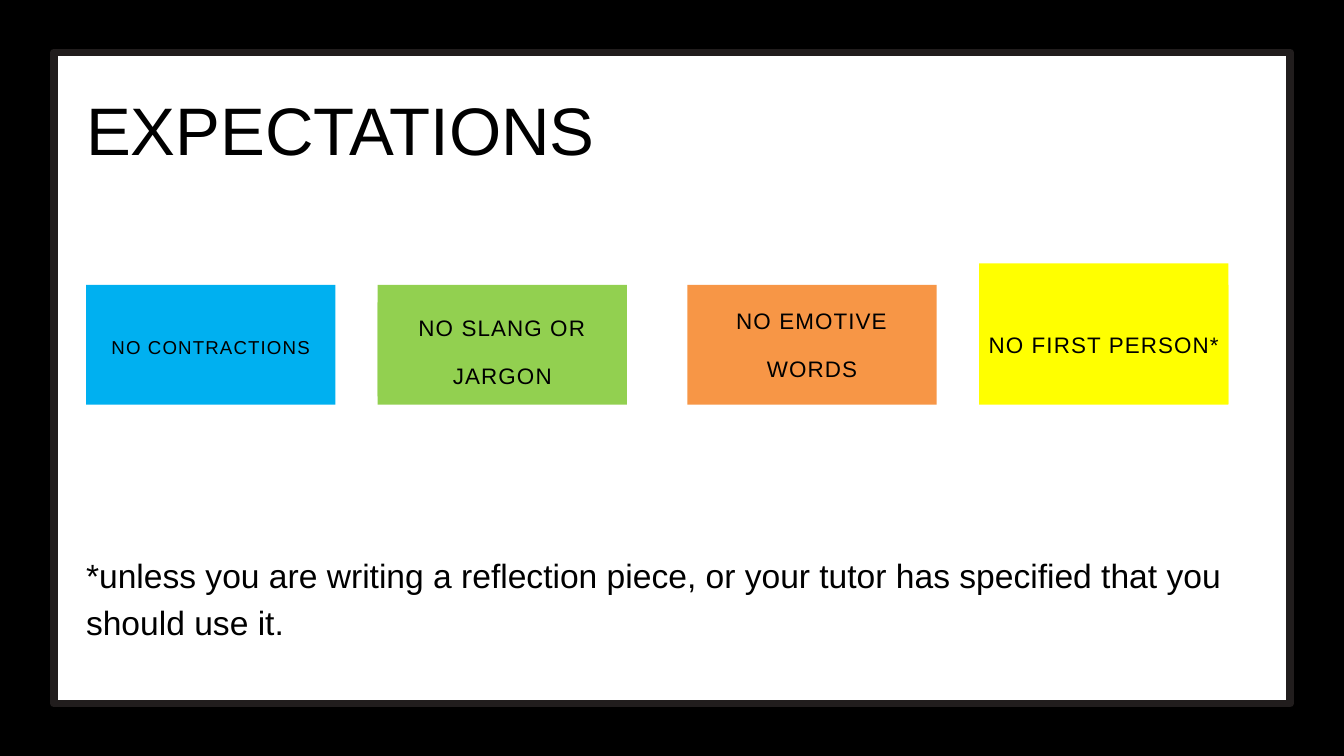
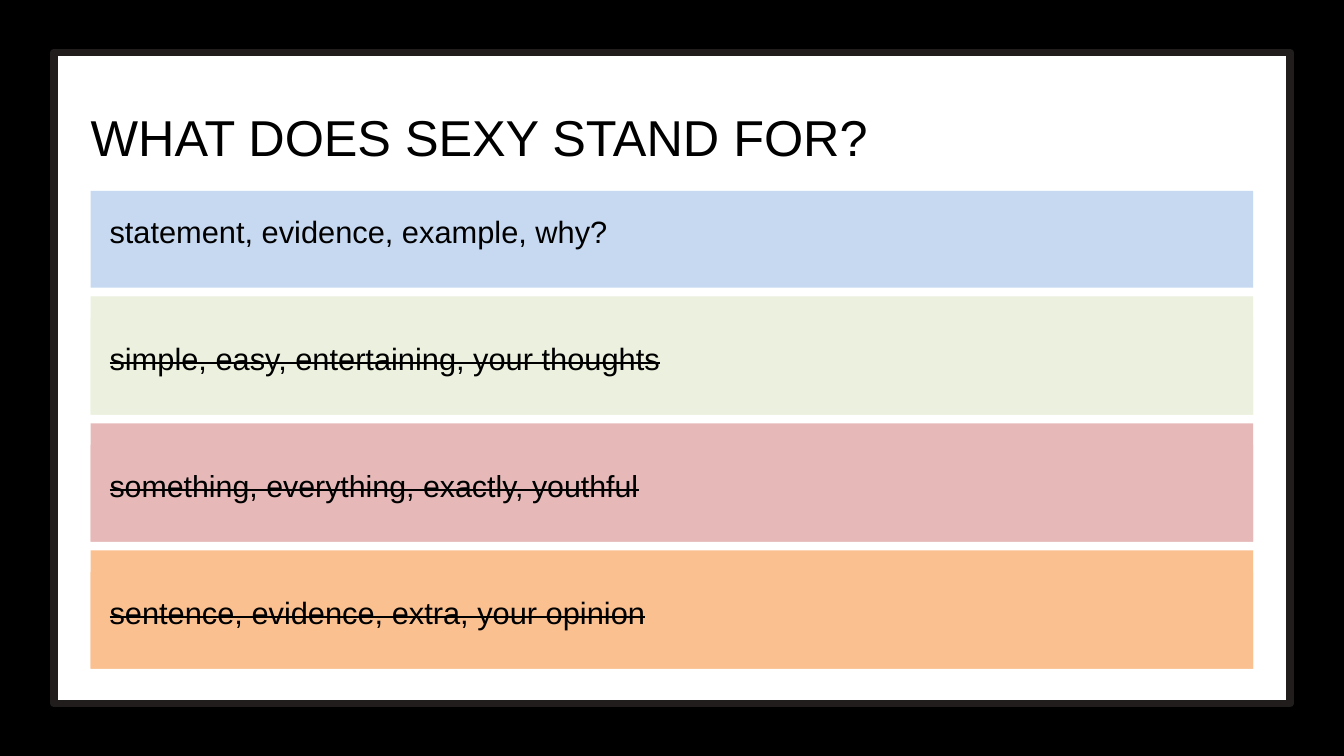
"""Build two slides on academic writing: expectations and the SEXY paragraph."""
from pptx import Presentation
from pptx.dml.color import RGBColor
from pptx.enum.shapes import MSO_SHAPE
from pptx.enum.text import MSO_ANCHOR, MSO_AUTO_SIZE, PP_ALIGN
from pptx.util import Inches, Pt

RECT = MSO_SHAPE.RECTANGLE
TOP, MIDDLE = MSO_ANCHOR.TOP, MSO_ANCHOR.MIDDLE
LEFT, CENTER = PP_ALIGN.LEFT, PP_ALIGN.CENTER
NO_FIT = MSO_AUTO_SIZE.NONE
FONT = "Arial"
COLORS = {
    "backdrop": "000000", "panel": "FFFFFF", "frame": "211D1D", "text": "000000",
    "blue": "00B0F0", "green": "92D050", "orange": "F79646", "yellow": "FFFF00",
    "pale_blue": "C6D9F1", "pale_green": "EBF1DE", "pink": "E6B9B8", "peach": "FAC090",
}

RULES_TITLE = ("EXPECTATIONS", (1.28, 1.11, 10.72, 1.32), 72)
# text, colour, size, left, card top, label top, label height, label filled
RULES = [
    ("NO CONTRACTIONS", "blue", 20, 1.28, 4.24, 3.92, 2.09, False),
    ("NO SLANG OR JARGON", "green", 24, 5.62, 4.5, 4.24, 1.66, True),
    ("NO EMOTIVE WORDS", "orange", 24, 10.23, 4.24, 3.92, 2.09, False),
    ("NO FIRST PERSON*", "yellow", 24, 14.57, 4.24, 3.92, 2.09, True),
]
RULE_W, RULE_BOTTOM = 3.71, 6.02
FOOTNOTE = ("*unless you are writing a reflection piece, or your tutor has "
            "specified that you should use it.")

QUIZ_TITLE = ("WHAT DOES SEXY STAND FOR?", (1.35, 1.08, 17.3, 1.26), 54)
# text, colour, size, is wrong
ANSWERS = [
    ("statement, evidence, example, why?", "pale_blue", 33, False),
    ("simple, easy, entertaining, your thoughts", "pale_green", 33, True),
    ("something, everything, exactly, youthful", "pink", 32.5, True),
    ("sentence, evidence, extra, your opinion", "peach", 33, True),
]
BAR_X, BAR_Y, BAR_W, BAR_H, BAR_STEP = 1.35, 2.84, 17.3, 1.44, 1.89
LABEL_RISE = 0.32

RULE_FORMAT = {"align": CENTER, "anchor": MIDDLE, "inset": 0.04, "leading": 51.8}
ANSWER_FORMAT = {"anchor": MIDDLE, "inset": 0.28, "leading": 46.2}


def rgb(name):
    return RGBColor.from_string(COLORS[name])


def add_rect(slide, box, color):
    sp = slide.shapes.add_shape(RECT, *map(Inches, box))
    sp.shadow.inherit = False
    sp.fill.solid()
    sp.fill.fore_color.rgb = rgb(color)
    sp.line.fill.background()
    return sp


def add_box(slide, box):
    return slide.shapes.add_textbox(*map(Inches, box))


def write(sp, text, size, leading, align=LEFT, anchor=TOP, inset=0, attrs=None):
    tf = sp.text_frame
    margins = {f"margin_{side}": Inches(inset)
               for side in ("left", "top", "right", "bottom")}
    frame = {"word_wrap": True, "auto_size": NO_FIT, "vertical_anchor": anchor}
    for key, value in {**frame, **margins}.items():
        setattr(tf, key, value)
    p = tf.paragraphs[0]
    p.alignment, p.line_spacing = align, Pt(leading)
    r = p.add_run()
    r.text = text
    r.font.name, r.font.size = FONT, Pt(size)
    r.font.color.rgb = rgb("text")
    for key, value in (attrs or {}).items():
        r.font._element.set(key, value)


def add_slide(prs, heading):
    text, box, size = heading
    slide = prs.slides.add_slide(prs.slide_layouts[5])
    frame = add_rect(slide, (0.8, 0.78, 18.4, 9.69), "panel")
    frame.line.color.rgb = rgb("frame")
    frame.line.width = Pt(8.25)
    title = slide.shapes.title
    title.left, title.top, title.width, title.height = map(Inches, box)
    write(title, text, size, 100.8)
    frame._element.addnext(title._element)
    return slide


def build_expectations(prs):
    slide = add_slide(prs, RULES_TITLE)
    for text, color, size, x, card_y, label_y, label_h, filled in RULES:
        add_rect(slide, (x, card_y, RULE_W, RULE_BOTTOM - card_y), color)
        box = (x, label_y, RULE_W, label_h)
        label = add_rect(slide, box, color) if filled else add_box(slide, box)
        write(label, text, size, attrs={"spc": "120"}, **RULE_FORMAT)
    write(add_box(slide, (1.28, 8.15, 17.59, 1.38)), FOOTNOTE, 36, 50.4)


def build_quiz(prs):
    slide = add_slide(prs, QUIZ_TITLE)
    for i, (text, color, size, wrong) in enumerate(ANSWERS):
        y = BAR_Y + i * BAR_STEP
        add_rect(slide, (BAR_X, y, BAR_W, BAR_H), color)
        box = (BAR_X, y - LABEL_RISE, BAR_W, BAR_H + LABEL_RISE)
        label = add_rect(slide, box, color) if wrong else add_box(slide, box)
        attrs = {"strike": "sngStrike"} if wrong else None
        write(label, text, size, attrs=attrs, **ANSWER_FORMAT)


def main():
    prs = Presentation()
    prs.slide_width, prs.slide_height = Inches(20), Inches(11.25)
    fill = prs.slide_master.background.fill
    fill.solid()
    fill.fore_color.rgb = rgb("backdrop")
    build_expectations(prs)
    build_quiz(prs)
    prs.save("out.pptx")


if __name__ == "__main__":
    main()
